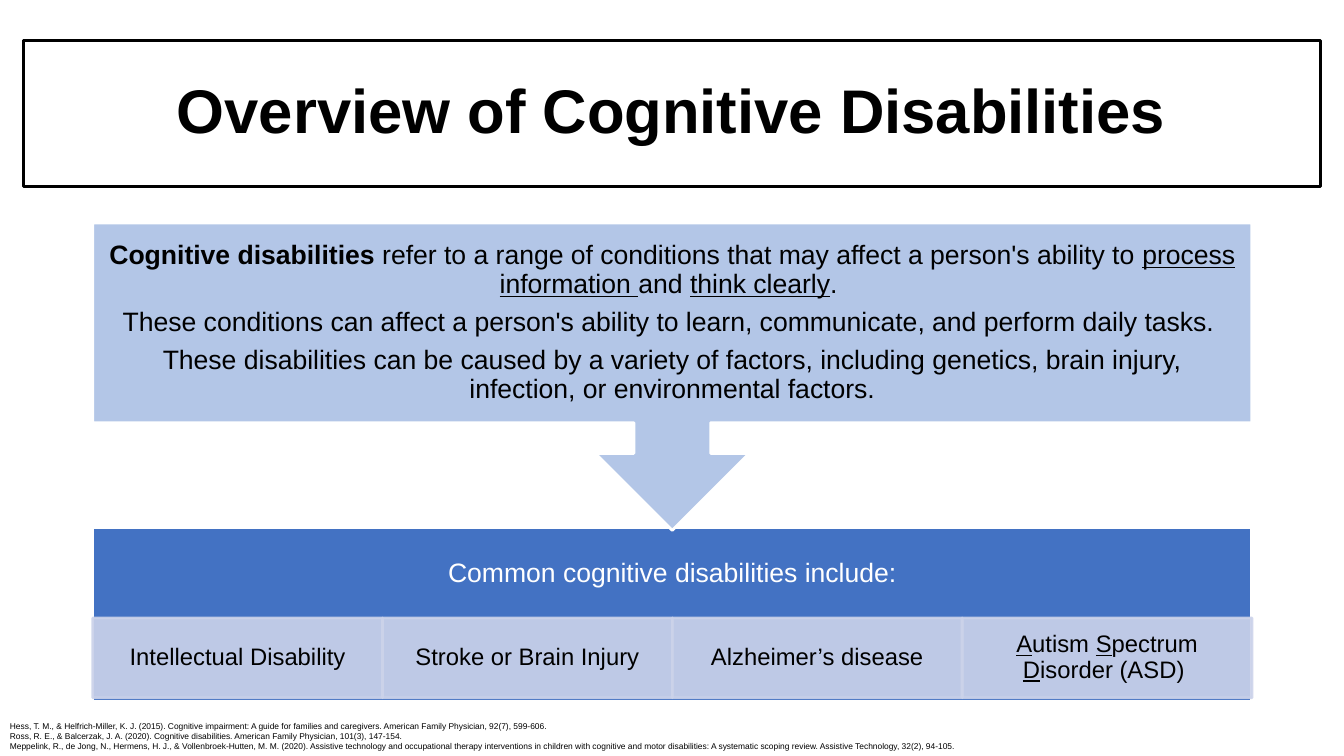
from lxml import etree
from pptx import Presentation
from pptx.dml.color import RGBColor
from pptx.enum import shapes, text
from pptx.oxml.ns import qn
from pptx.util import Pt

BLACK = RGBColor(0x00, 0x00, 0x00)
WHITE = RGBColor(0xFF, 0xFF, 0xFF)
HEADER_BLUE = RGBColor(0x43, 0x72, 0xC3)
CALLOUT_BLUE = RGBColor(0xB3, 0xC6, 0xE7)
CELL_BLUE = RGBColor(0xCC, 0xD3, 0xEA)

LEFT, WIDTH = 66.25, 828
CELL_INSETS = (9.5, 1.5)
WIDE_INSETS = (10.5, 10.5)
BOX_INSETS = (7.2, 3.6)

# A paragraph is a list of (words, style) runs; style is "", "b" (bold) or "u" (underlined).
DEFINITION = [
    [("Cognitive disabilities ", "b"),
     ("refer to a range of conditions that may affect a person's ability to ", ""),
     ("process information ", "u"), ("and ", ""), ("think clearly", "u"), (". ", "")],
    [("These conditions can affect a person's ability to learn, communicate, "
      "and perform daily tasks. ", "")],
    [("These disabilities can be caused by a variety of factors, including genetics, "
      "brain injury, infection, or environmental factors.", "")],
]
DISABILITIES = [
    [("Intellectual Disability", "")],
    [("Stroke or Brain Injury", "")],
    [("Alzheimer’s disease", "")],
    [("A", "u"), ("utism ", ""), ("S", "u"), ("pectrum ", ""),
     ("D", "u"), ("isorder (ASD) ", "")],
]
REFERENCES = [
    [("Hess, T. M., & Helfrich-Miller, K. J. (2015). Cognitive impairment: A guide for "
      "families and caregivers. American Family Physician, 92(7), 599-606.", "")],
    [("Ross, R. E., & Balcerzak, J. A. (2020). Cognitive disabilities. "
      "American Family Physician, 101(3), 147-154.", "")],
    [("Meppelink, R., de Jong, N., Hermens, H. J., & Vollenbroek-Hutten, M. M. (2020). "
      "Assistive technology and occupational therapy interventions in children with "
      "cognitive and motor disabilities: A systematic scoping review. "
      "Assistive Technology, 32(2), 94-105.", "")],
]


def set_frame(frame, insets, anchor):
    frame.word_wrap = True
    frame.vertical_anchor = anchor
    frame.margin_left = frame.margin_right = Pt(insets[0])
    frame.margin_top = frame.margin_bottom = Pt(insets[1])


def write_paragraphs(frame, paragraphs, size, color=BLACK):
    for index, spans in enumerate(paragraphs):
        para = frame.add_paragraph() if index else frame.paragraphs[0]
        para.font.size = Pt(size)
        para.font.name = "Arial"
        para.font.color.rgb = color
        for words, style in spans:
            span = para.add_run()
            span.text = words
            if style == "b":
                span.font.bold = True
            elif style == "u":
                span.font.underline = True


def write_centred(shape, paragraphs, size, insets, color=BLACK):
    frame = shape.text_frame
    set_frame(frame, insets, text.MSO_ANCHOR.MIDDLE)
    write_paragraphs(frame, paragraphs, size, color)
    for index, para in enumerate(frame.paragraphs):
        para.alignment = text.PP_ALIGN.CENTER
        para.line_spacing = 0.9
        para.space_before = Pt(6.7 if index else 0)


def add_panel(page, kind, box, fill, line):
    shape = page.shapes.add_shape(kind, *map(Pt, box))
    shape.shadow.inherit = False
    shape.fill.solid()
    shape.fill.fore_color.rgb = fill
    shape.line.color.rgb = line
    shape.line.width = Pt(2)
    return shape


def make_translucent(shape, percent):
    """Set the opacity of both the fill and the outline."""
    for color in shape.element.spPr.iter(qn("a:srgbClr")):
        etree.SubElement(color, qn("a:alpha")).set("val", str(percent * 1000))


def add_title(page):
    title = add_panel(page, shapes.MSO_SHAPE.RECTANGLE, (16.6, 28.8, 926.6, 104.4),
                      WHITE, BLACK)
    write_centred(title, [[("Overview of Cognitive Disabilities", "b")]], 44, BOX_INSETS)


def add_definition(page):
    callout = add_panel(page, shapes.MSO_SHAPE.DOWN_ARROW_CALLOUT,
                        (LEFT, 159.2, WIDTH, 219.6), CALLOUT_BLUE, WHITE)
    for index, value in enumerate((0.25, 0.25, 0.25, 0.65)):
        callout.adjustments[index] = value
    write_centred(callout, DEFINITION, 19, WIDE_INSETS)


def add_disabilities(page):
    top = 376.6
    add_panel(page, shapes.MSO_SHAPE.RECTANGLE, (LEFT, top, WIDTH, 124.5),
              HEADER_BLUE, WHITE)
    header = page.shapes.add_textbox(Pt(LEFT), Pt(top), Pt(WIDTH), Pt(67))
    write_centred(header, [[("Common cognitive disabilities include:", "")]], 19,
                  WIDE_INSETS, WHITE)
    cell_width = WIDTH / len(DISABILITIES)
    for column, spans in enumerate(DISABILITIES):
        cell = add_panel(page, shapes.MSO_SHAPE.RECTANGLE,
                         (LEFT + column * cell_width, 441.4, cell_width, 57),
                         CELL_BLUE, CELL_BLUE)
        make_translucent(cell, 90)
        write_centred(cell, [spans], 17, CELL_INSETS)


def add_references(page):
    box = page.shapes.add_textbox(Pt(0), Pt(511.2), Pt(943.2), Pt(28.8))
    set_frame(box.text_frame, BOX_INSETS, text.MSO_ANCHOR.TOP)
    box.text_frame.auto_size = text.MSO_AUTO_SIZE.SHAPE_TO_FIT_TEXT
    write_paragraphs(box.text_frame, REFERENCES, 6)
    for para in box.text_frame.paragraphs:
        properties = para._p.get_or_add_pPr()
        properties.set("marL", str(Pt(27)))
        properties.set("indent", str(Pt(-27)))


def main():
    deck = Presentation()
    deck.slide_width, deck.slide_height = Pt(960), Pt(540)
    page = deck.slides.add_slide(deck.slide_layouts[6])
    add_disabilities(page)
    add_definition(page)
    add_title(page)
    add_references(page)
    deck.save("out.pptx")


if __name__ == "__main__":
    main()
